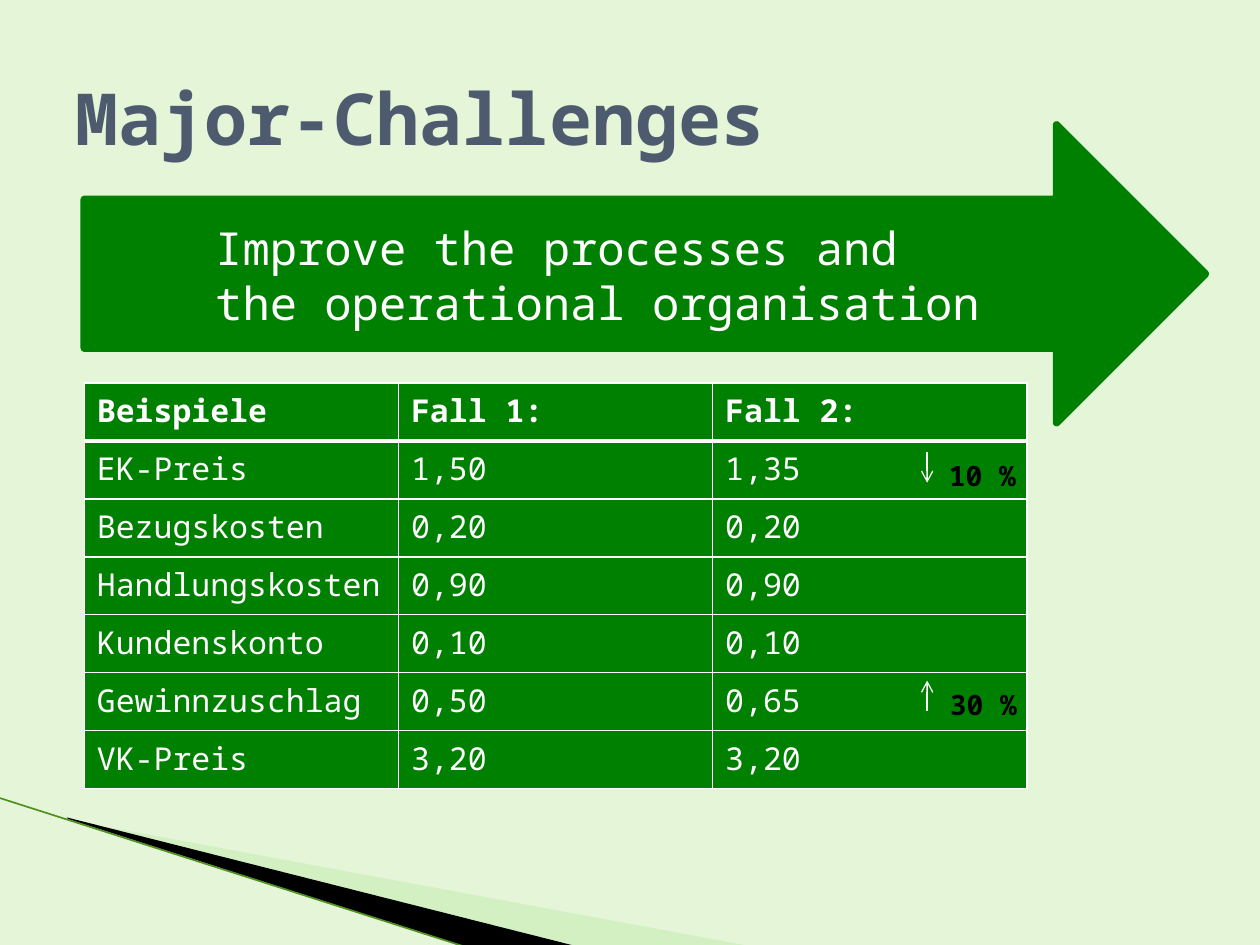
from lxml.etree import SubElement
from pptx import Presentation
from pptx.dml.color import RGBColor
from pptx.enum.shapes import MSO_CONNECTOR, MSO_SHAPE
from pptx.enum.text import MSO_ANCHOR, PP_ALIGN
from pptx.oxml.ns import qn
from pptx.util import Cm, Pt

FONT = "Noto Sans Mono"
MINT = RGBColor(0xE5, 0xF6, 0xD8)
LEAF = RGBColor(0xB8, 0xE7, 0xA1)
EDGE = RGBColor(0x4F, 0x90, 0x20)
GREEN = RGBColor(0x00, 0x80, 0x00)
SLATE = RGBColor(0x4E, 0x5B, 0x6F)
WHITE = RGBColor(0xFF, 0xFF, 0xFF)
BLACK = RGBColor(0x00, 0x00, 0x00)

ROWS = [
    ("Beispiele", "Fall 1:", "Fall 2:"),
    ("EK-Preis", "1,50", "1,35"),
    ("Bezugskosten", "0,20", "0,20"),
    ("Handlungskosten", "0,90", "0,90"),
    ("Kundenskonto", "0,10", "0,10"),
    ("Gewinnzuschlag", "0,50", "0,65"),
    ("VK-Preis", "3,20", "3,20"),
]


def style(frame, size, color, bold=False):
    for para in frame.paragraphs:
        for run in para.runs:
            font = run.font
            font.name, font.size, font.bold = FONT, Pt(size), bold
            font.color.rgb = color


def place(shape, left, top, width, height):
    shape.left, shape.top = Cm(left), Cm(top)
    shape.width, shape.height = Cm(width), Cm(height)


def add_title(slide, text):
    title = slide.shapes.title
    place(title, 1.27, 0.76, 22.86, 3.18)
    frame = title.text_frame
    frame.text = text
    frame.vertical_anchor = MSO_ANCHOR.MIDDLE
    frame.paragraphs[0].alignment = PP_ALIGN.LEFT
    style(frame, 41, SLATE, True)


def add_text(slide, text, box, size, color, bold=False):
    frame = slide.shapes.add_textbox(*map(Cm, box)).text_frame
    frame.word_wrap = True
    frame.text = text
    style(frame, size, color, bold)


def add_wedge(slide, points, color, alpha=None):
    """Draw a filled outline; alpha is its opacity in percent."""
    start, *rest = [(Cm(x), Cm(y)) for x, y in points]
    path = slide.shapes.build_freeform(*start)
    path.add_line_segments(rest)
    wedge = path.convert_to_shape()
    wedge.shadow.inherit = False
    wedge.fill.solid()
    wedge.fill.fore_color.rgb = color
    wedge.line.fill.background()
    if alpha:
        tint = wedge.fill._xPr.find(".//" + qn("a:srgbClr"))
        SubElement(tint, qn("a:alpha"), val=str(alpha * 1000))


def add_line(slide, start, end, color, width, head=False):
    line = slide.shapes.add_connector(
        MSO_CONNECTOR.STRAIGHT, *map(Cm, start + end))
    line.line.color.rgb = color
    line.line.width = Pt(width)
    if head:
        SubElement(line.line._get_or_add_ln(), qn("a:tailEnd"), type="arrow")
    SubElement(line._element.spPr, qn("a:effectLst"))


def add_arrow(slide):
    arrow = slide.shapes.add_shape(
        MSO_SHAPE.RIGHT_ARROW, Cm(1.7), Cm(2.52), Cm(22.6), Cm(6))
    arrow.shadow.inherit = False
    arrow.fill.solid()
    arrow.fill.fore_color.rgb = GREEN
    arrow.line.color.rgb = GREEN
    arrow.line.width = Pt(4.33)


def add_border(cell, side, width):
    props = cell._tc.get_or_add_tcPr()
    line = SubElement(props, qn("a:ln" + side), w=str(Pt(width)))
    fill = SubElement(line, qn("a:solidFill"))
    SubElement(fill, qn("a:srgbClr"), val=str(WHITE))


def add_grid(slide):
    grid = slide.shapes.add_table(
        len(ROWS), 3, Cm(1.7), Cm(7.72), Cm(19), Cm(8.18)).table
    for r, row in enumerate(ROWS):
        for c, text in enumerate(row):
            cell = grid.cell(r, c)
            for side in "LRTB":
                thick = (r, side) in ((0, "B"), (1, "T"))
                add_border(cell, side, 3 if thick else 1)
            cell.fill.solid()
            cell.fill.fore_color.rgb = GREEN
            cell.text_frame.text = text
            style(cell.text_frame, 18, WHITE, r == 0)


def main():
    deck = Presentation()
    deck.slide_width, deck.slide_height = Cm(25.4), Cm(19.05)
    slide = deck.slides.add_slide(deck.slide_layouts[5])
    back = slide.background.fill
    back.solid()
    back.fore_color.rgb = MINT

    add_wedge(slide, [(1.4, 16.53), (15.11, 19.07), (11.58, 19.07),
                      (1.4, 16.51)], LEAF, 40)
    add_wedge(slide, [(1.35, 16.48), (11.6, 19.07), (9.45, 19.1),
                      (1.37, 16.51)], BLACK)
    add_line(slide, (-0.03, 16.08), (9.42, 19.1), EDGE, 0.95)

    add_title(slide, "Major-Challenges")
    add_arrow(slide)
    add_text(slide, "Improve the processes and\vthe operational organisation",
             (4.09, 4.32, 29.41, 2.49), 26, WHITE)
    add_grid(slide)
    add_text(slide, "10 %", (18.88, 9.12, 2.6, 0.94), 16, BLACK, True)
    add_text(slide, "30 %", (18.9, 13.74, 2.6, 0.94), 16, BLACK, True)
    add_line(slide, (18.69, 9.12), (18.69, 9.73), WHITE, 0.75, True)
    add_line(slide, (18.69, 14.33), (18.69, 13.72), WHITE, 0.75, True)
    deck.save("out.pptx")


if __name__ == "__main__":
    main()
